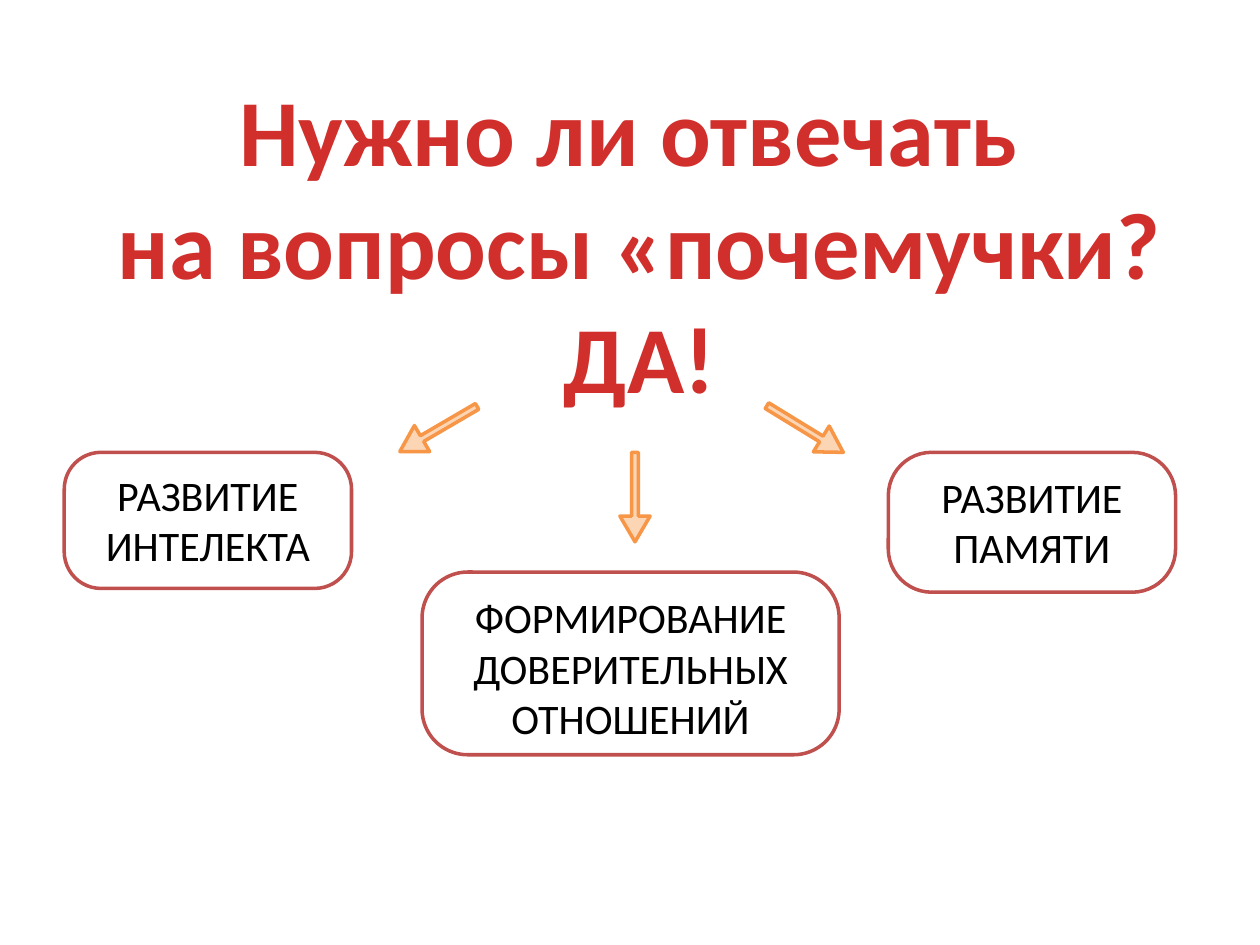
from pptx import Presentation
from pptx.dml.color import RGBColor
from pptx.enum.shapes import MSO_SHAPE as SHAPE
from pptx.enum.text import MSO_ANCHOR as ANCHOR, MSO_AUTO_SIZE as AUTO, PP_ALIGN as ALIGN
from pptx.util import Inches, Pt

RED, BOX_LINE = "D02F2C", "C0504D"
ARROW_FILL, ARROW_LINE = "FCD5B5", "F79646"


def rgb(value):
    return RGBColor.from_string(value)


def write(sp, *lines, size=24, color="000000", bold=False):
    """Fill a shape with centred paragraphs, one for each line."""
    tf = sp.text_frame
    tf.word_wrap = True
    tf.auto_size = AUTO.NONE
    tf.vertical_anchor = ANCHOR.TOP
    for i, line in enumerate(lines):
        p = tf.add_paragraph() if i else tf.paragraphs[0]
        p.alignment = ALIGN.CENTER
        r = p.add_run()
        r.text = line
        r.font.name, r.font.size, r.font.bold = "Calibri", Pt(size), bold
        r.font.color.rgb = rgb(color)


def add_shape(s, kind, box, fill, line, adjustments):
    sp = s.shapes.add_shape(kind, *map(Inches, box))
    sp.shadow.inherit = False
    sp.fill.solid()
    sp.fill.fore_color.rgb = rgb(fill)
    sp.line.color.rgb = rgb(line)
    sp.line.width = Pt(2)
    for i, value in enumerate(adjustments):
        sp.adjustments[i] = value
    return sp


def add_title(s, box):
    sp = s.shapes.title
    sp.left, sp.top, sp.width, sp.height = map(Inches, box)
    write(sp, "Нужно ли отвечать ", "на вопросы «почемучки?", "ДА!",
          size=54, color=RED, bold=True)


def add_benefit(s, box, text, rounding):
    sp = add_shape(s, SHAPE.ROUNDED_RECTANGLE, box, "FFFFFF", BOX_LINE, [rounding])
    write(sp, text)


def add_arrow(s, box, angle):
    sp = add_shape(s, SHAPE.DOWN_ARROW, box, ARROW_FILL, ARROW_LINE, [0.22, 0.85])
    sp.rotation = angle


def main():
    prs = Presentation()
    prs.slide_width, prs.slide_height = Inches(10), Inches(7.5)
    s = prs.slides.add_slide(prs.slide_layouts[5])

    # Question and answer
    add_title(s, (0.79, 0.52, 8.57, 2.83))

    # Benefits of answering
    for box, text, rounding in [
        ((0.51, 3.59, 2.28, 1.08), "РАЗВИТИЕ ИНТЕЛЕКТА", 0.27),
        ((7.05, 3.59, 2.28, 1.11), "РАЗВИТИЕ ПАМЯТИ", 0.31),
        ((3.35, 4.54, 3.31, 1.45), "ФОРМИРОВАНИЕ ДОВЕРИТЕЛЬНЫХ ОТНОШЕНИЙ", 0.25),
    ]:
        add_benefit(s, box, text, rounding)

    # Arrows from the answer to each benefit
    for left, top, angle in [(4.92, 3.59, 0), (6.27, 3.05, 301.5), (3.36, 3.05, 59.7)]:
        add_arrow(s, (left, top, 0.24, 0.71), angle)

    prs.save("out.pptx")


if __name__ == "__main__":
    main()
